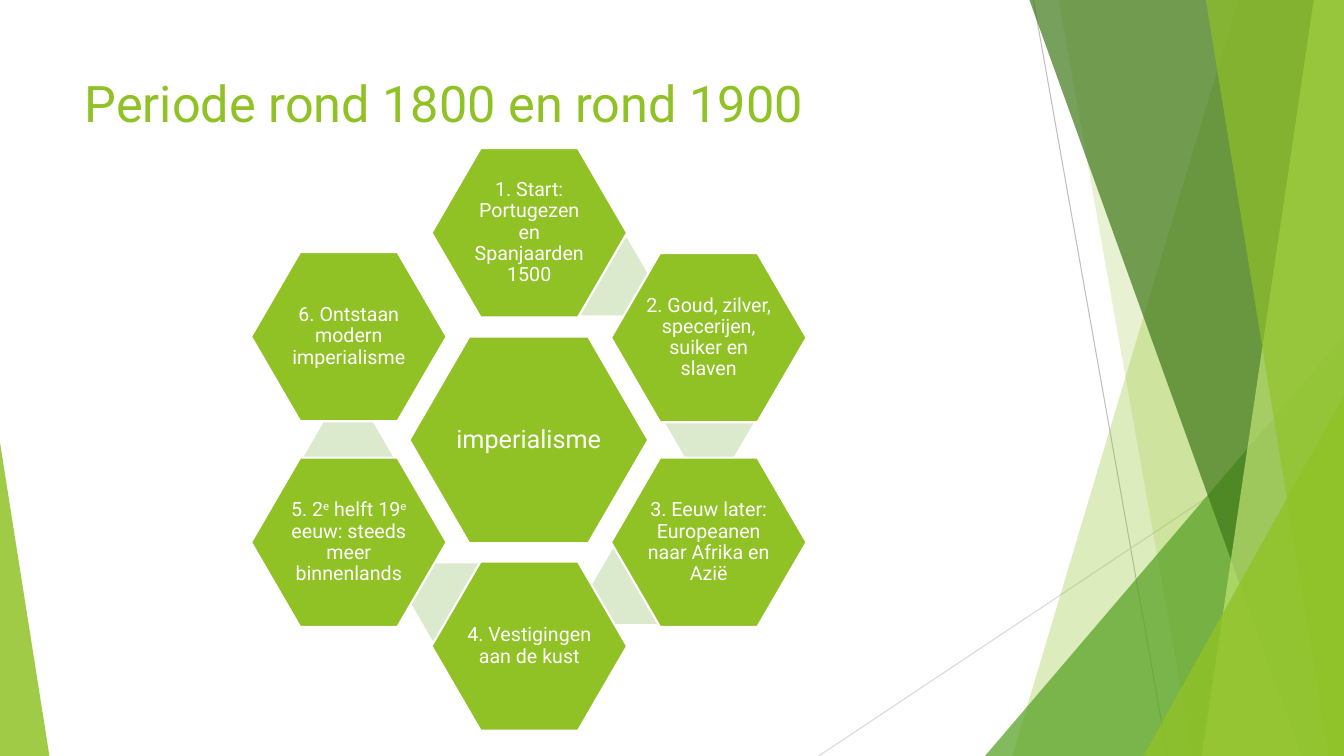
from lxml.etree import SubElement
from pptx import Presentation
from pptx.dml.color import RGBColor
from pptx.enum.shapes import MSO_CONNECTOR, MSO_SHAPE
from pptx.enum.text import MSO_ANCHOR, MSO_AUTO_SIZE, PP_ALIGN
from pptx.oxml.ns import qn
from pptx.util import Pt

PX = 9144  # 100 px to the inch
W, H = 1333, 750
GREEN, PALE, WHITE = "90C226", "DBE9CD", "FFFFFF"


def paint(sp, color, alpha=100):
    """Flat fill with alpha in percent, no line, no shadow."""
    sp.shadow.inherit = False
    sp.line.fill.background()
    sp.fill.solid()
    sp.fill.fore_color.rgb = RGBColor.from_string(color)
    if alpha < 100:
        clr = sp.fill._xPr.find(".//" + qn("a:srgbClr"))
        SubElement(clr, qn("a:alpha")).set("val", str(alpha * 1000))


def add_hexagon(left, top, width, height, color, runs=(), size=14, inset=2):
    """Hexagon; runs are (text, is_superscript) pairs, and text brings a white outline."""
    sp = s.shapes.add_shape(MSO_SHAPE.HEXAGON, left * PX, top * PX, width * PX, height * PX)
    sp.adjustments[0] = 0.29
    paint(sp, color)
    if not runs:
        return
    sp.line.color.rgb = RGBColor.from_string(WHITE)
    sp.line.width = Pt(1.5)
    tf = sp.text_frame
    tf.word_wrap = True
    tf.vertical_anchor = MSO_ANCHOR.MIDDLE
    tf.margin_left = tf.margin_right = tf.margin_top = tf.margin_bottom = inset * PX
    p = tf.paragraphs[0]
    p.alignment = PP_ALIGN.CENTER
    p.line_spacing = 0.9
    for text, superscript in runs:
        r = p.add_run()
        r.text = text
        r.font.name = "Roboto"
        r.font.size = Pt(size)
        r.font.color.rgb = RGBColor.from_string(WHITE)
        if superscript:
            r._r.get_or_add_rPr().set("baseline", "30000")


prs = Presentation()
prs.slide_width, prs.slide_height = W * PX, H * PX
s = prs.slides.add_slide(prs.slide_layouts[5])

# Thin lines behind the green bands
for x1, y1, x2, y2, color in [(1025, 0, 1158, H, "BFBFBF"), (W, 403, 812, H, "D9D9D9")]:
    line = s.shapes.add_connector(MSO_CONNECTOR.STRAIGHT, x1 * PX, y1 * PX, x2 * PX, y2 * PX)
    line.line.color.rgb = RGBColor.from_string(color)
    line.line.width = Pt(0.75)
    SubElement(line._element.spPr, qn("a:effectLst"))

# Bands: (top x, bottom x) up to the right edge; triangles: (left, top, width, height, apex)
decor = [
    ((1228, 1004), GREEN, 30),
    ((1050, 1183), GREEN, 20),
    ((977, 333, 356, 417, 1), "54A021", 72),
    ((1021, 1291), "3F7819", 70),
    ((1303, 1192), "C0E474", 70),
    ((1196, 1318), GREEN, 65),
    ((1134, 393, 199, 357, 1), GREEN, 80),
    ((0, 439, 49, 311, 0), GREEN, 85),
]
for geometry, color, alpha in decor:
    if len(geometry) == 2:
        top_x, bottom_x = geometry
        fb = s.shapes.build_freeform(top_x, 0, scale=PX)
        fb.add_line_segments([(W, 0), (W, H), (bottom_x, H)])
        sp = fb.convert_to_shape()
    else:
        *box, apex = geometry
        sp = s.shapes.add_shape(MSO_SHAPE.ISOSCELES_TRIANGLE, *[v * PX for v in box])
        sp.adjustments[0] = apex
    paint(sp, color, alpha)

title = s.shapes.title
s.shapes._spTree.append(title._element)  # in front of the bands
title.left, title.top, title.width, title.height = 74 * PX, 67 * PX, 940 * PX, 144 * PX
tf = title.text_frame
tf.word_wrap = True
tf.auto_size = MSO_AUTO_SIZE.NONE
tf.vertical_anchor = MSO_ANCHOR.TOP
p = tf.paragraphs[0]
p.alignment = PP_ALIGN.LEFT
r = p.add_run()
r.text = "Periode rond 1800 en rond 1900"
r.font.name = "Roboto"
r.font.size = Pt(36)
r.font.color.rgb = RGBColor.from_string(GREEN)

# Hexagon cycle: (left, top) of each step, (left, top) of its pale link, runs
add_hexagon(406, 334, 237, 205, GREEN, [("imperialisme", False)], 18, 3)
steps = [
    ((428, 147), (555, 236), [("1. Start: Portugezen en Spanjaarden 1500", False)]),
    ((606, 251), (659, 380), [("2. Goud, zilver, specerijen, suiker en slaven", False)]),
    ((606, 454), (587, 542), [("3. Eeuw later: Europeanen naar Afrika en Azië", False)]),
    ((428, 557), (407, 559), [("4. Vestigingen aan de kust", False)]),
    ((249, 454), (301, 415), [("5. 2", False), ("e", True), (" helft 19", False), ("e", True),
                              (" eeuw: steeds meer binnenlands", False)]),
    ((249, 250), None, [("6. Ontstaan modern imperialisme", False)]),
]
for position, link, runs in steps:
    if link:
        add_hexagon(*link, 89, 77, PALE)
    add_hexagon(*position, 194, 168, GREEN, runs)

prs.save("out.pptx")
